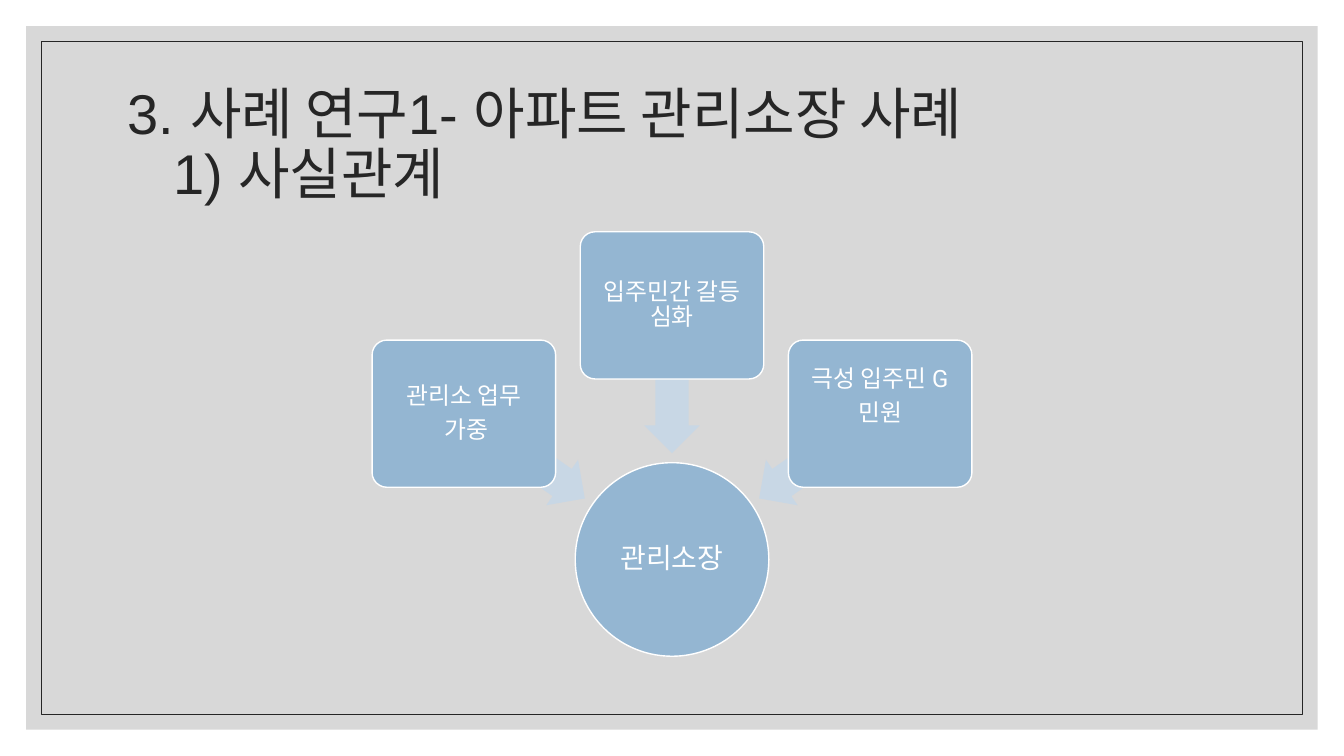
from math import cos, radians, sin

from lxml import etree
from pptx import Presentation
from pptx.dml.color import RGBColor
from pptx.enum.shapes import MSO_SHAPE
from pptx.enum.text import MSO_ANCHOR, PP_ALIGN
from pptx.oxml.ns import qn
from pptx.util import Inches, Pt

RECT, OVAL = MSO_SHAPE.RECTANGLE, MSO_SHAPE.OVAL
ROUND, ARROW = MSO_SHAPE.ROUNDED_RECTANGLE, MSO_SHAPE.LEFT_ARROW
MIDDLE, CENTER, LEFT = MSO_ANCHOR.MIDDLE, PP_ALIGN.CENTER, PP_ALIGN.LEFT

WHITE = RGBColor(0xFF, 0xFF, 0xFF)
GRAY = RGBColor(0xBF, 0xBF, 0xBF)
INK = RGBColor(0x26, 0x26, 0x26)
BLUE = RGBColor(0x94, 0xB6, 0xD2)
PALE = RGBColor(0xC8, 0xD7, 0xE5)

WIDE, HIGH = 13.33, 7.5
TITLE = ["3. 사례 연구1- 아파트 관리소장 사례", "1) 사실관계"]
HUB = "관리소장"
# angle around the hub, lines, extra room below the text
CAUSES = [
    (215, ["관리소 업무", " 가중"], 0),
    (270, ["입주민간 갈등 심화"], 0),
    (325, ["극성 입주민 G", "민원"], 0.34),
]


def add_form(slide, kind, box, fill=None, line=None, weight=1):
    form = slide.shapes.add_shape(kind, *map(Inches, box))
    form.shadow.inherit = False
    if fill is None:
        form.fill.background()
    else:
        form.fill.solid()
        form.fill.fore_color.rgb = fill
    if line is None:
        form.line.fill.background()
    else:
        form.line.color.rgb = line
        form.line.width = Pt(weight)
    return form


def write(form, lines, font, size, color, align=CENTER, inset=0.04, low=0, after=0):
    """Fill a form with one paragraph per line; low adds room at the bottom."""
    frame = form.text_frame
    frame.word_wrap = True
    frame.vertical_anchor = MIDDLE
    frame.margin_left = frame.margin_right = frame.margin_top = Inches(inset)
    frame.margin_bottom = Inches(inset + low)
    for i, text in enumerate(lines):
        para = frame.paragraphs[0] if i == 0 else frame.add_paragraph()
        para.alignment = align
        para.line_spacing = 0.9
        para.space_after = Pt(after)
        run = para.add_run()
        run.text = text
        run.font.name = font
        run.font.size = Pt(size)
        run.font.color.rgb = color


def centered(x, y, w, h):
    return x - w / 2, y - h / 2, w, h


def add_frame(slide, wide, high):
    """Draw the translucent panel and the thin outline within it."""
    def inner(gap):
        return gap, gap, wide - 2 * gap, high - 2 * gap

    panel = add_form(slide, RECT, inner(0.26), GRAY)
    tint = panel.fill._xPr.find(qn("a:solidFill"))[0]
    etree.SubElement(tint, qn("a:alpha")).set("val", "60000")
    add_form(slide, RECT, inner(0.41), line=INK, weight=0.5)


def add_title(slide, box):
    form = slide.shapes.add_textbox(*map(Inches, box))
    write(form, TITLE, "Arial", 40, INK, LEFT, inset=0.1)
    props = form.text_frame.paragraphs[1]._p.get_or_add_pPr()
    props.set("marL", str(Inches(0.45)))


def add_web(slide, x, y):
    """Set the causes on an arc around a hub centred at x, y."""
    hub = add_form(slide, OVAL, centered(x, y, 1.92, 1.92), BLUE, WHITE)
    write(hub, [HUB], "Roboto", 20, WHITE, inset=0.01, after=7)

    for angle, lines, low in CAUSES:
        def spot(reach, w, h):
            turn = radians(angle)
            return centered(x + reach * cos(turn), y + reach * sin(turn), w, h)

        arrow = add_form(slide, ARROW, spot(1.79, 1.47, 0.55), PALE)
        arrow.adjustments[0], arrow.adjustments[1] = 0.6, 0.5
        arrow.rotation = angle
        card = add_form(slide, ROUND, spot(2.52, 1.82, 1.46), BLUE, WHITE)
        card.adjustments[0] = 0.1
        write(card, lines, "Roboto", 17, WHITE, low=low, after=6)


def main():
    deck = Presentation()
    deck.slide_width, deck.slide_height = Inches(WIDE), Inches(HIGH)
    slide = deck.slides.add_slide(deck.slide_layouts[6])
    add_frame(slide, WIDE, HIGH)
    add_title(slide, (1.17, 0.7, 11, 1.5))
    add_web(slide, WIDE / 2, HIGH * 0.74)
    deck.save("out.pptx")


if __name__ == "__main__":
    main()
